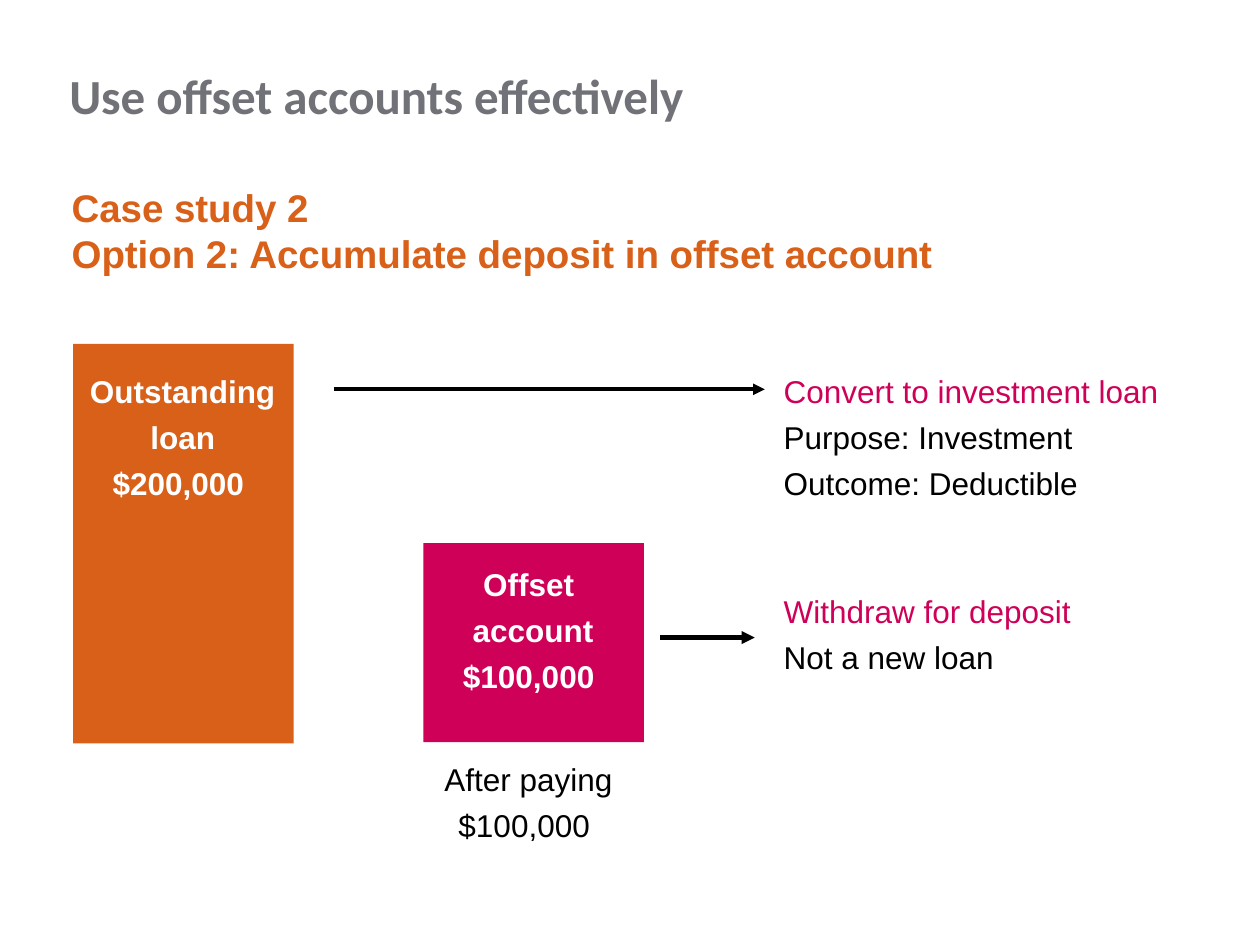
from lxml import etree
from pptx import Presentation
from pptx.dml.color import RGBColor
from pptx.enum.shapes import MSO_CONNECTOR, MSO_SHAPE
from pptx.enum.text import MSO_ANCHOR, PP_ALIGN
from pptx.oxml.ns import qn
from pptx.util import Inches, Pt

RECTANGLE, STRAIGHT = MSO_SHAPE.RECTANGLE, MSO_CONNECTOR.STRAIGHT
LEFT, CENTER, MIDDLE = PP_ALIGN.LEFT, PP_ALIGN.CENTER, MSO_ANCHOR.MIDDLE

THEME = {
    "orange": "D86018", "pink": "CE0058", "grey": "717278",
    "black": "000000", "white": "FFFFFF",
    "title_font": "Calibri", "body_font": "Arial",
    "title_size": 28, "heading_size": 22, "body_size": 18,
}

# Content: places are left, top, width, height in inches
TITLE = "Use offset accounts effectively"
HEADING = "Case study 2\vOption 2: Accumulate deposit in offset account"
BARS = [
    ((0.58, 2.73, 1.75, 3.17), "orange"),
    ((3.36, 4.31, 1.75, 1.58), "pink"),
]
# Place, alignment, bold, first line colour, other lines colour, lines
LABELS = [
    ((0.49, 2.98, 1.92, 1.08), CENTER, True, "white", "white",
     ["Outstanding", "loan", "$200,000 "]),
    ((3.27, 4.51, 1.92, 1.08), CENTER, True, "white", "white",
     ["Offset ", "account", "$100,000 "]),
    ((2.11, 6.06, 4.17, 0.69), CENTER, False, "black", "black",
     ["After paying", "$100,000 "]),
    ((6.16, 2.98, 4.17, 1.08), LEFT, False, "pink", "black",
     ["Convert to investment loan", "Purpose: Investment", "Outcome: Deductible"]),
    ((6.16, 4.73, 4.17, 0.7), LEFT, False, "pink", "black",
     ["Withdraw for deposit", "Not a new loan"]),
]
# Start x, end x, y, line width in points
ARROWS = [(2.65, 6.07, 3.09, 2.25), (5.24, 5.99, 5.06, 2.5)]


def inches(values):
    return [Inches(value) for value in values]


def color(name):
    return RGBColor.from_string(THEME[name])


def style(para, kind, color_name, bold):
    for span in para.runs:
        span.font.name = THEME["title_font" if kind == "title" else "body_font"]
        span.font.size = Pt(THEME[kind + "_size"])
        span.font.bold = bold
        span.font.color.rgb = color(color_name)


def space_lines(para):
    """Tight lines, half a line of space before, and a hanging indent."""
    para.line_spacing = 0.8
    para.space_before = Pt(0)
    properties = para._p.get_or_add_pPr()
    properties.set("marL", str(Inches(0.3)))
    properties.set("indent", str(Inches(-0.3)))
    before = properties.find(qn("a:spcBef"))
    before.clear()
    etree.SubElement(before, qn("a:spcPct")).set("val", "50000")


def add_bar(slide, place, fill):
    bar = slide.shapes.add_shape(RECTANGLE, *inches(place))
    bar.shadow.inherit = False
    bar.fill.solid()
    bar.fill.fore_color.rgb = color(fill)
    bar.line.fill.background()


def add_label(slide, place, align, bold, first_color, other_color, lines):
    frame = slide.shapes.add_textbox(*inches(place)).text_frame
    frame.word_wrap = True
    frame.margin_left = frame.margin_right = Inches(0.06)
    frame.margin_top = frame.margin_bottom = Inches(0.03)
    frame.text = "\n".join(lines)
    for index, para in enumerate(frame.paragraphs):
        para.alignment = align
        space_lines(para)
        style(para, "body", other_color if index else first_color, bold)


def add_arrow(slide, start, end, y, width):
    arrow = slide.shapes.add_connector(STRAIGHT, *inches((start, y, end, y)))
    arrow.line.width = Pt(width)
    arrow.line.color.rgb = color("black")
    etree.SubElement(arrow.line._get_or_add_ln(), qn("a:tailEnd")).set("type", "triangle")
    etree.SubElement(arrow._element.spPr, qn("a:effectLst"))


def main():
    deck = Presentation()
    deck.slide_width, deck.slide_height = inches((10, 7.5))
    slide = deck.slides.add_slide(deck.slide_layouts[5])

    # Title
    title = slide.shapes.title
    title.left, title.top, title.width, title.height = inches((0.45, 0.55, 7.86, 0.4))
    title.text_frame.text = TITLE
    title.text_frame.vertical_anchor = MIDDLE
    title.text_frame.paragraphs[0].alignment = LEFT
    style(title.text_frame.paragraphs[0], "title", "grey", True)

    # Case heading
    heading = slide.shapes.add_textbox(*inches((0.47, 1.41, 7.08, 0.83)))
    para = heading.text_frame.paragraphs[0]
    para.text = HEADING
    style(para, "heading", "orange", True)

    # Loan and offset bars, their labels and the arrows to the outcomes
    for bar in BARS:
        add_bar(slide, *bar)
    for label in LABELS:
        add_label(slide, *label)
    for arrow in ARROWS:
        add_arrow(slide, *arrow)

    deck.save("out.pptx")


if __name__ == "__main__":
    main()
